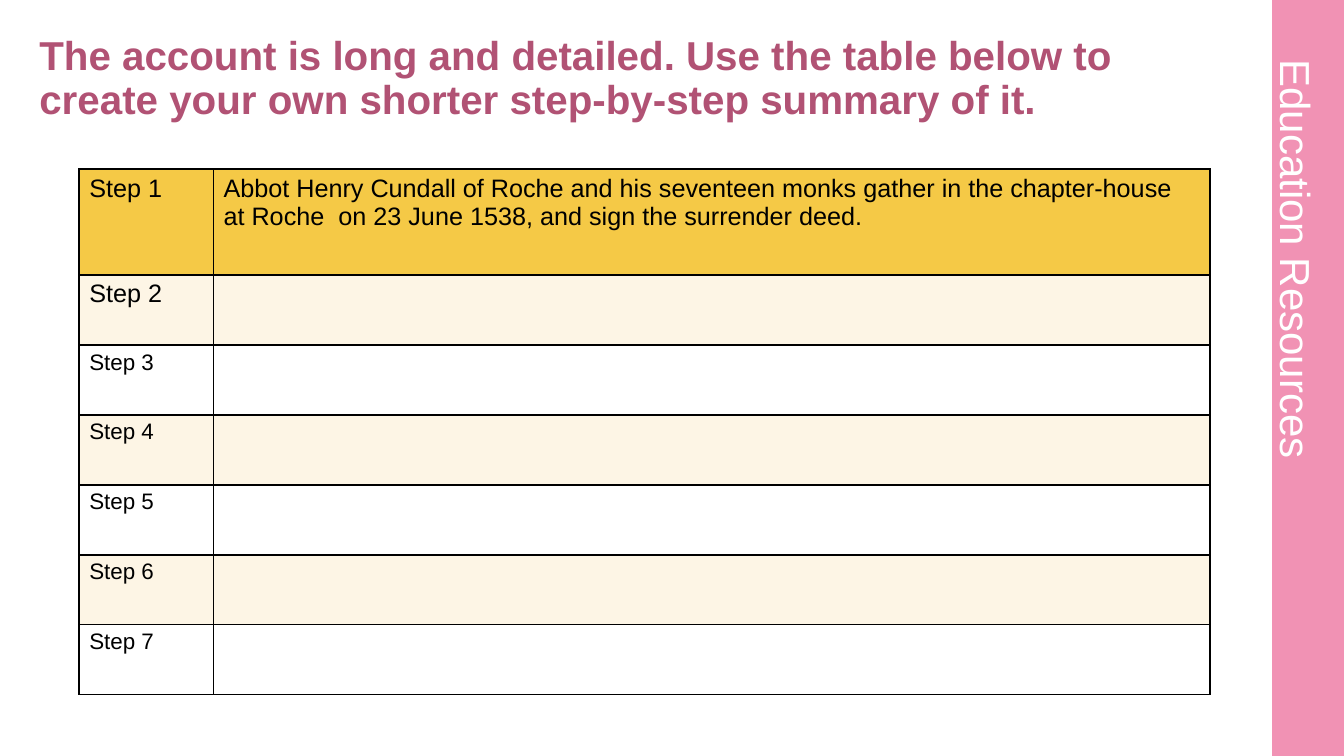
from lxml import etree
from pptx import Presentation
from pptx.dml.color import RGBColor
from pptx.enum import shapes, text
from pptx.oxml import ns
from pptx.util import Pt

HEADING = ("The account is long and detailed. Use the table below to "
           "create your own shorter step-by-step summary of it.")
BANNER = "Education Resources"
STEPS = [
    ("Step 1", "Abbot Henry Cundall of Roche and his seventeen monks gather in the "
               "chapter-house at Roche  on 23 June 1538, and sign the surrender deed."),
    ("Step 2", ""),
    ("Step 3", ""),
    ("Step 4", ""),
    ("Step 5", ""),
    ("Step 6", ""),
    ("Step 7", ""),
]

WIDTH, HEIGHT = 960, 540
BAND_LEFT = 908.6
COLUMNS = [95.9, 711.8]
FIRST_ROW, OTHER_ROW = 75.6, 49.95
GOLD, CREAM, WHITE, BLACK = "F5C946", "FDF5E5", "FFFFFF", "000000"
PINK, ROSE = "F192B4", "B15274"


def color(value):
    return RGBColor.from_string(value)


def paint(part, value):
    part.fill.solid()
    part.fill.fore_color.rgb = color(value)


def format_runs(frame, size, value, bold=False):
    for paragraph in frame.paragraphs:
        for run in paragraph.runs:
            run.font.name = "Arial"
            run.font.size = Pt(size)
            run.font.bold = bold
            run.font.color.rgb = color(value)


def outline(cell):
    properties = cell._tc.get_or_add_tcPr()
    for place, side in enumerate(("lnL", "lnR", "lnT", "lnB")):
        line = etree.Element(ns.qn(f"a:{side}"), w=str(Pt(1.5)))
        fill = etree.SubElement(line, ns.qn("a:solidFill"))
        etree.SubElement(fill, ns.qn("a:srgbClr"), val=BLACK)
        properties.insert(place, line)


def add_banner(slide):
    band = slide.shapes.add_shape(shapes.MSO_SHAPE.RECTANGLE, Pt(BAND_LEFT), 0,
                                  Pt(WIDTH - BAND_LEFT), Pt(HEIGHT))
    paint(band, PINK)
    band.line.fill.background()
    band.shadow.inherit = False

    banner = slide.shapes.add_textbox(Pt(797), Pt(159.1), Pt(288.7), Pt(51.8))
    banner.rotation = 90
    frame = banner.text_frame
    frame.word_wrap = True
    frame.margin_left = frame.margin_right = frame.margin_top = frame.margin_bottom = 0
    frame.text = BANNER
    frame.paragraphs[0].alignment = text.PP_ALIGN.CENTER
    frame.paragraphs[0].line_spacing = Pt(58.8)
    format_runs(frame, 30, WHITE)


def add_heading(slide):
    heading = slide.shapes.title
    heading.left, heading.top = Pt(28.1), Pt(28.8)
    heading.width, heading.height = Pt(866.2), Pt(56.2)
    frame = heading.text_frame
    frame.word_wrap = True
    frame.auto_size = text.MSO_AUTO_SIZE.NONE
    frame.vertical_anchor = text.MSO_ANCHOR.MIDDLE
    frame.margin_left = 0
    frame.text = HEADING
    frame.paragraphs[0].alignment = text.PP_ALIGN.LEFT
    frame.paragraphs[0].line_spacing = 0.9
    format_runs(frame, 28.8, ROSE, bold=True)


def add_steps(slide):
    heights = [FIRST_ROW] + [OTHER_ROW] * (len(STEPS) - 1)
    steps = slide.shapes.add_table(len(STEPS), len(COLUMNS), Pt(56.6), Pt(120.8),
                                   Pt(sum(COLUMNS)), Pt(sum(heights))).table
    for column, width in zip(steps.columns, COLUMNS):
        column.width = Pt(width)
    for index, (row, height, entries) in enumerate(zip(steps.rows, heights, STEPS)):
        row.height = Pt(height)
        shade = GOLD if index == 0 else CREAM if index % 2 else WHITE
        for cell, entry in zip(row.cells, entries):
            cell.text_frame.text = entry
            format_runs(cell.text_frame, 18 if index < 2 else 16, BLACK)
            paint(cell, shade)
            outline(cell)


def main():
    deck = Presentation()
    deck.slide_width, deck.slide_height = Pt(WIDTH), Pt(HEIGHT)
    slide = deck.slides.add_slide(deck.slide_layouts[5])
    add_banner(slide)
    add_heading(slide)
    add_steps(slide)
    deck.save("out.pptx")


if __name__ == "__main__":
    main()
